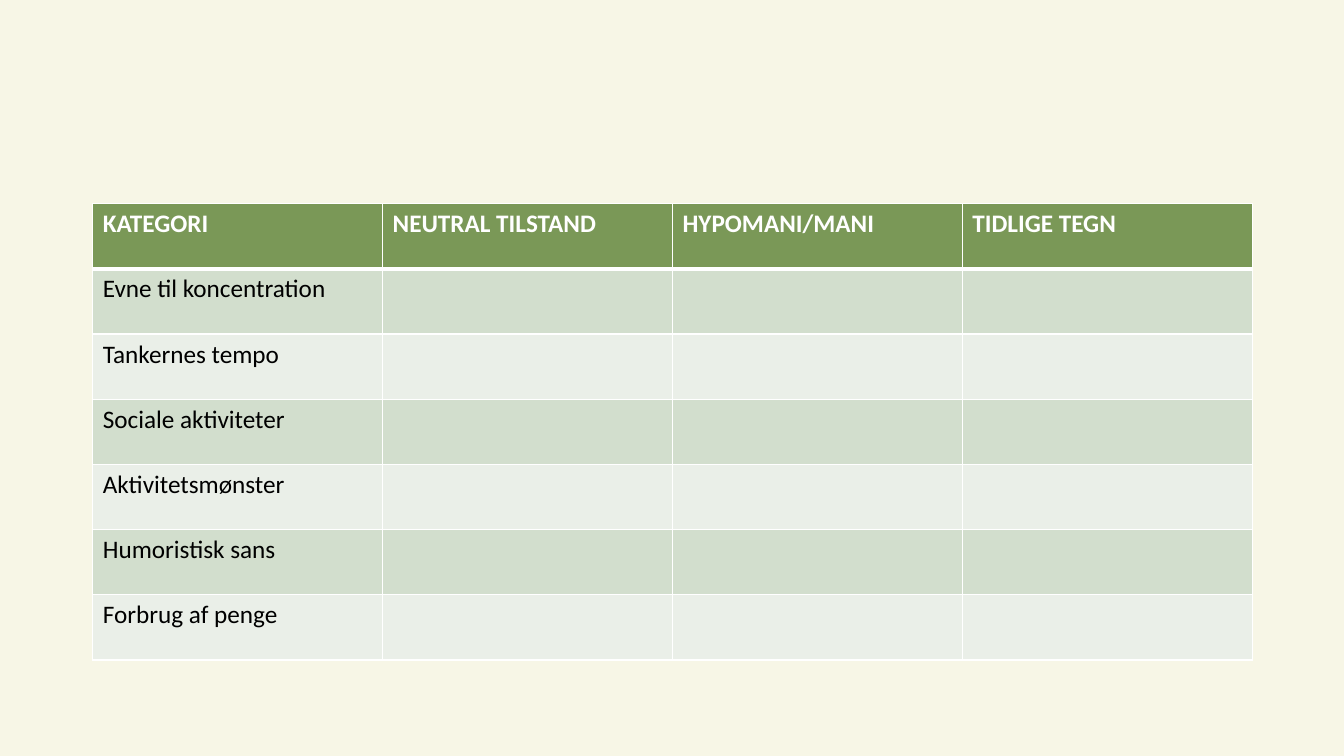
import pptx
import pptx.dml.color
import pptx.oxml.ns
import pptx.util
import lxml.etree

HEADINGS = ["KATEGORI", "NEUTRAL TILSTAND", "HYPOMANI/MANI", "TIDLIGE TEGN"]
CATEGORIES = [
    "Evne til koncentration",
    "Tankernes tempo",
    "Sociale aktiviteter",
    "Aktivitetsmønster",
    "Humoristisk sans",
    "Forbrug af penge",
]
BACKGROUND, HEADING_FILL, RULE = "F7F6E6", "7A9857", "FFFFFF"
BAND_FILLS = ["EAEFE8", "D2DECD"]
HEADING_FONT = {"name": "Calibri", "size": pptx.util.Pt(18), "bold": True}
CATEGORY_FONT = {**HEADING_FONT, "bold": False}
LEFT, TOP, WIDTH, HEIGHT = (pptx.util.Inches(n) for n in (0.92, 2.02, 11.5, 4.53))


def paint(fill, color):
    fill.solid()
    fill.fore_color.rgb = pptx.dml.color.RGBColor.from_string(color)


def add_border(cell, side, points):
    qn = pptx.oxml.ns.qn
    properties = cell._tc.get_or_add_tcPr()
    line = lxml.etree.SubElement(properties, qn(f"a:ln{side}"), w=str(pptx.util.Pt(points)))
    solid = lxml.etree.SubElement(line, qn("a:solidFill"))
    lxml.etree.SubElement(solid, qn("a:srgbClr"), val=RULE)


def format_cell(cell, row, text):
    heading = row == 0
    widths = {"L": 1, "R": 1, "T": 3 if row == 1 else 1, "B": 3 if heading else 1}
    for side, points in widths.items():
        add_border(cell, side, points)
    paint(cell.fill, HEADING_FILL if heading else BAND_FILLS[row % 2])
    cell.text = text
    font = cell.text_frame.paragraphs[0].font
    for attribute, value in (HEADING_FONT if heading else CATEGORY_FONT).items():
        setattr(font, attribute, value)
    paint(font.fill, "FFFFFF" if heading else "000000")


def main():
    deck = pptx.Presentation()
    deck.slide_width = pptx.util.Inches(13.33)
    deck.slide_height = pptx.util.Inches(7.5)
    slide = deck.slides.add_slide(deck.slide_layouts[6])
    paint(slide.background.fill, BACKGROUND)

    rows = [HEADINGS] + [[name] + [""] * (len(HEADINGS) - 1) for name in CATEGORIES]
    signs = slide.shapes.add_table(
        len(rows), len(HEADINGS), LEFT, TOP, WIDTH, HEIGHT
    ).table
    for row, texts in enumerate(rows):
        for column, text in enumerate(texts):
            format_cell(signs.cell(row, column), row, text)
    deck.save("out.pptx")


if __name__ == "__main__":
    main()
